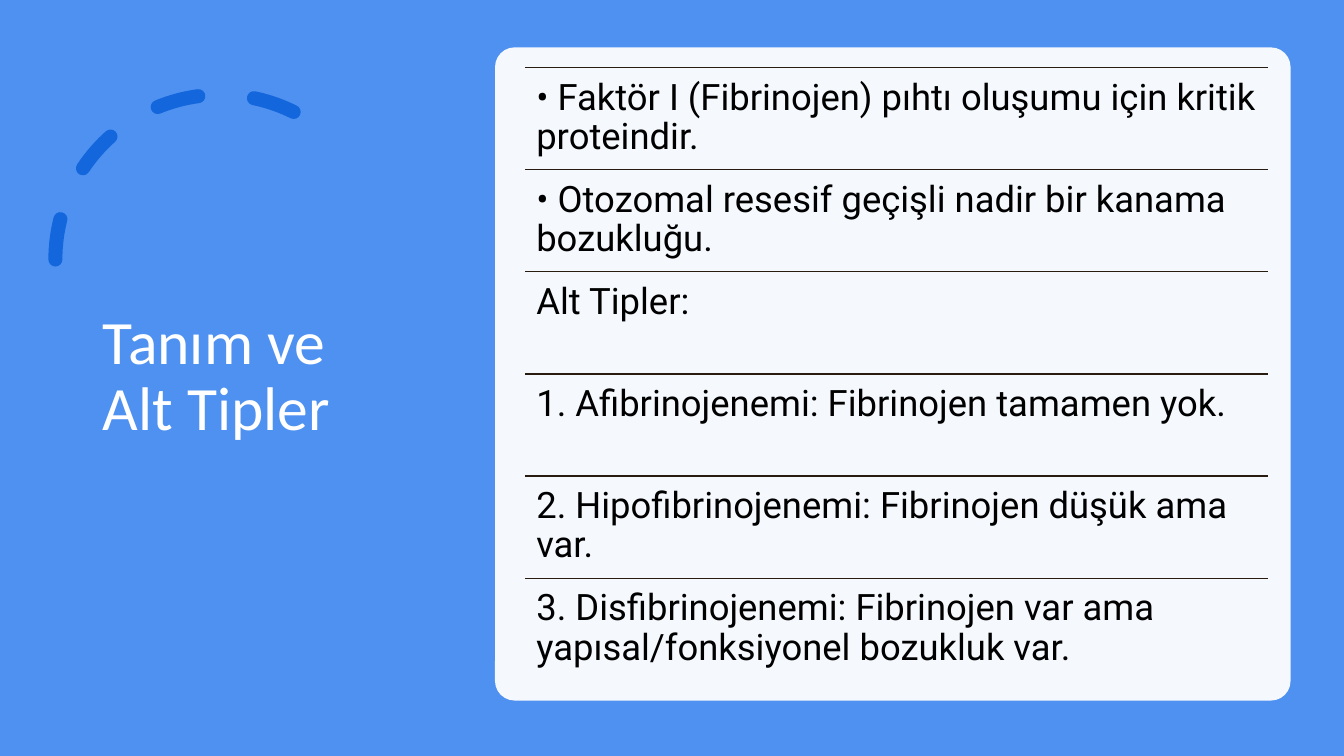
from dataclasses import dataclass

from lxml import etree
from pptx import Presentation
from pptx.dml.color import RGBColor
from pptx.enum.dml import MSO_LINE
from pptx.enum.shapes import MSO_CONNECTOR, MSO_SHAPE
from pptx.enum.text import MSO_ANCHOR, MSO_AUTO_SIZE, PP_ALIGN
from pptx.oxml.ns import qn
from pptx.util import Inches, Pt

ARC, ROUNDED = MSO_SHAPE.ARC, MSO_SHAPE.ROUNDED_RECTANGLE
STRAIGHT, DASH = MSO_CONNECTOR.STRAIGHT, MSO_LINE.DASH
TOP, MIDDLE = MSO_ANCHOR.TOP, MSO_ANCHOR.MIDDLE
LEFT, NO_FIT = PP_ALIGN.LEFT, MSO_AUTO_SIZE.NONE


@dataclass(frozen=True)
class Theme:
    background: RGBColor = RGBColor(0x4E, 0x91, 0xF0)
    accent: RGBColor = RGBColor(0x13, 0x66, 0xDC)
    white: RGBColor = RGBColor(0xFF, 0xFF, 0xFF)
    rule: RGBColor = RGBColor(0x28, 0x1B, 0x10)
    ink: RGBColor = RGBColor(0, 0, 0)
    title_font: str = "Calibri"
    body_font: str = "Roboto"
    title_size: Pt = Pt(44)
    body_size: Pt = Pt(26)


theme = Theme()


def write(frame, text, font_name, size, color, anchor):
    frame.text = text
    frame.word_wrap = True
    frame.auto_size = NO_FIT
    frame.vertical_anchor = anchor
    paragraph = frame.paragraphs[0]
    paragraph.alignment = LEFT
    paragraph.line_spacing = 0.9
    font = paragraph.runs[0].font
    font.name, font.size = font_name, size
    font.color.rgb = color


presentation = Presentation()
presentation.slide_width = Inches(13.33)
presentation.slide_height = Inches(7.5)
slide = presentation.slides.add_slide(presentation.slide_layouts[5])
slide.background.fill.solid()
slide.background.fill.fore_color.rgb = theme.background

dashed_arc = slide.shapes.add_shape(ARC, Inches(0.55), Inches(0.94), Inches(3.27), Inches(3.27))
dashed_arc.shadow.inherit = False
dashed_arc.adjustments[0] = 146.13
dashed_arc.adjustments[1] = 0
dashed_arc.fill.background()
dashed_arc.line.color.rgb = theme.accent
dashed_arc.line.width = Pt(10)
dashed_arc.line.dash_style = DASH
arc_properties = dashed_arc._element.spPr
arc_properties.find(qn("a:xfrm")).set("flipH", "1")
arc_properties.find(qn("a:ln")).set("cap", "rnd")

heading = slide.shapes.title
heading.left, heading.top = Inches(0.92), Inches(0.7)
heading.width, heading.height = Inches(3.23), Inches(6.09)
write(heading.text_frame, "Tanım ve Alt Tipler", theme.title_font,
      theme.title_size, theme.white, MIDDLE)

card = slide.shapes.add_shape(ROUNDED, Inches(4.91), Inches(0.47), Inches(7.89), Inches(6.48))
card.shadow.inherit = False
card.adjustments[0] = 0.03
card.fill.solid()
card.fill.fore_color.rgb = theme.white
card.line.fill.background()
card_color = card._element.spPr.find(qn("a:solidFill"))[0]
etree.SubElement(card_color, qn("a:alpha")).set("val", "95000")

statements = [
    "• Faktör I (Fibrinojen) pıhtı oluşumu için kritik proteindir.",
    "• Otozomal resesif geçişli nadir bir kanama bozukluğu.",
    "Alt Tipler:",
    "1. Afibrinojenemi: Fibrinojen tamamen yok.",
    "2. Hipofibrinojenemi: Fibrinojen düşük ama var.",
    "3. Disfibrinojenemi: Fibrinojen var ama yapısal/fonksiyonel bozukluk var.",
]
list_left, list_top, list_width = Inches(5.21), Inches(0.67), Inches(7.37)
row_height = Inches(6.08) // len(statements)
statement_list = slide.shapes.add_group_shape()

for index, statement in enumerate(statements):
    row_top = list_top + index * row_height
    divider = statement_list.shapes.add_connector(
        STRAIGHT, list_left, row_top, list_left + list_width, row_top)
    divider.line.color.rgb = theme.rule
    divider.line.width = Pt(1)
    etree.SubElement(divider._element.spPr, qn("a:effectLst"))

    row = statement_list.shapes.add_textbox(list_left, row_top, list_width, row_height)
    frame = row.text_frame
    frame.margin_left = frame.margin_right = Inches(0.11)
    frame.margin_top = frame.margin_bottom = Inches(0.11)
    write(frame, statement, theme.body_font, theme.body_size, theme.ink, TOP)

presentation.save("out.pptx")
